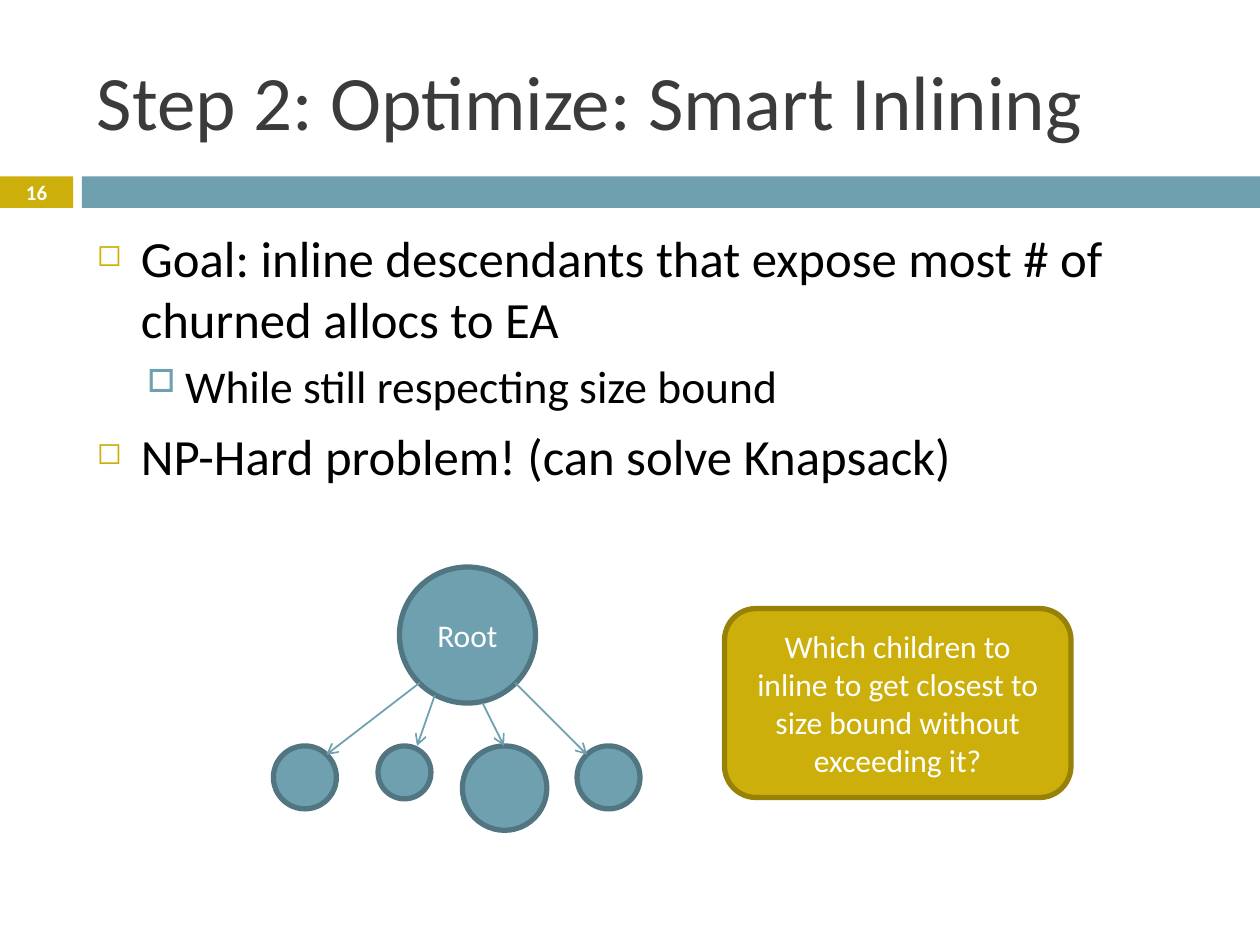
"""Build the smart inlining slide."""
from typing import NamedTuple

from lxml.etree import SubElement
from pptx import Presentation
from pptx.dml.color import RGBColor
from pptx.enum.shapes import MSO_CONNECTOR, MSO_SHAPE
from pptx.enum.text import MSO_ANCHOR, PP_ALIGN
from pptx.oxml.ns import qn
from pptx.util import Inches, Pt

COLORS = {
    "gold": "CCAF0A", "gold_edge": "978107", "teal": "6EA0B0",
    "teal_edge": "517682", "title": "3B3B3B", "black": "000000", "white": "FFFFFF",
}
CENTERED = {"alignment": PP_ALIGN.CENTER}


class Box(NamedTuple):
    left: float
    top: float
    width: float
    height: float


class Bullet(NamedTuple):
    text: str
    level: int
    size: float
    space: float
    margin: float
    hanging: float
    mark: str
    mark_color: str
    mark_percent: int


class Node(NamedTuple):
    left: float
    top: float
    diameter: float
    label: str = ""


class Arrow(NamedTuple):
    start: tuple[float, float]
    end: tuple[float, float]


BULLET_STYLES = [
    {"level": 0, "size": 29, "space": 7, "margin": 0.35, "hanging": 0.35,
     "mark": "◻", "mark_color": "gold", "mark_percent": 60},
    {"level": 1, "size": 26, "space": 5.5, "margin": 0.7, "hanging": 0.3,
     "mark": "□", "mark_color": "teal", "mark_percent": 70},
]
BULLETS = [
    Bullet("Goal: inline descendants that expose most # of churned allocs to EA", **BULLET_STYLES[0]),
    Bullet("While still respecting size bound", **BULLET_STYLES[1]),
    Bullet("NP-Hard problem! (can solve Knapsack)", **BULLET_STYLES[0]),
]
CHILD_TOP = 5.92
NODES = [Node(3.17, 4.5, 1.08, "Root")] + [
    Node(left, CHILD_TOP, diameter)
    for left, diameter in [(2.17, 0.5), (3, 0.42), (3.67, 0.67), (4.58, 0.5)]
]
ARROWS = [
    Arrow((3.33, 5.42), (2.59, 5.99)),
    Arrow((3.83, 5.58), (4, CHILD_TOP)),
    Arrow((4.09, 5.42), (4.66, 5.99)),
    Arrow((3.45, 5.52), (3.31, CHILD_TOP)),
]


def color(name: str) -> RGBColor:
    """Return a named colour."""
    return RGBColor.from_string(COLORS[name])


def apply(target, values: dict) -> None:
    """Set each attribute from a dict of format values."""
    for name, value in values.items():
        setattr(target, name, value)


def write(paragraph, text: str, size: float, color_name: str, bold: bool = False) -> None:
    """Add one formatted run to a paragraph."""
    run = paragraph.add_run()
    run.text = text
    apply(run.font, {"name": "Calibri", "size": Pt(size), "bold": bold})
    run.font.color.rgb = color(color_name)


def add_shape(slide, kind, box: Box, fill: str, edge: str = "", text: str = ""):
    """Add a filled shape with an optional edge and centred text."""
    shape = slide.shapes.add_shape(kind, *map(Inches, box))
    shape.shadow.inherit = False
    shape.fill.solid()
    shape.fill.fore_color.rgb = color(fill)
    if edge:
        shape.line.color.rgb = color(edge)
        shape.line.width = Pt(3)
    else:
        shape.line.fill.background()
    if text:
        apply(shape.text_frame, {"word_wrap": True, "vertical_anchor": MSO_ANCHOR.MIDDLE})
        paragraph = shape.text_frame.paragraphs[0]
        apply(paragraph, CENTERED)
        write(paragraph, text, 18, "white")
    return shape


def add_text_box(slide, box: Box, anchor=MSO_ANCHOR.MIDDLE):
    """Add a wrapping text box and return its text frame."""
    frame = slide.shapes.add_textbox(*map(Inches, box)).text_frame
    apply(frame, {"word_wrap": True, "vertical_anchor": anchor})
    return frame


def add_bullet(paragraph, bullet: Bullet) -> None:
    """Fill a paragraph with a bulleted line."""
    apply(paragraph, {"level": bullet.level, "space_before": Pt(bullet.space)})
    properties = paragraph._p.get_or_add_pPr()
    properties.set("marL", str(Inches(bullet.margin)))
    properties.set("indent", str(-Inches(bullet.hanging)))
    mark_color = SubElement(properties, qn("a:buClr"))
    SubElement(mark_color, qn("a:srgbClr"), val=COLORS[bullet.mark_color])
    SubElement(properties, qn("a:buSzPct"), val=str(bullet.mark_percent * 1000))
    SubElement(properties, qn("a:buChar"), char=bullet.mark)
    write(paragraph, bullet.text, bullet.size, "black")


def add_arrow(slide, arrow: Arrow) -> None:
    """Add a thin line with an open arrowhead."""
    connector = slide.shapes.add_connector(
        MSO_CONNECTOR.STRAIGHT, *map(Inches, arrow.start + arrow.end))
    connector.line.color.rgb = color("teal")
    connector.line.width = Pt(1)
    SubElement(connector.line._get_or_add_ln(), qn("a:tailEnd"), type="arrow")
    SubElement(connector._element.spPr, qn("a:effectLst"))


def main() -> None:
    """Build and save the slide."""
    presentation = Presentation()
    apply(presentation, {"slide_width": Inches(10), "slide_height": Inches(7.5)})
    slide = presentation.slides.add_slide(presentation.slide_layouts[6])

    add_shape(slide, MSO_SHAPE.RECTANGLE, Box(0, 1.4, 0.58, 0.25), "gold")
    add_shape(slide, MSO_SHAPE.RECTANGLE, Box(0.65, 1.4, 9.35, 0.25), "teal")

    title = add_text_box(slide, Box(0.67, 0.25, 8.92, 1.08))
    write(title.paragraphs[0], "Step 2: Optimize: Smart Inlining", 44, "title")

    number = add_text_box(slide, Box(0, 1.39, 0.58, 0.27))
    apply(number.paragraphs[0], CENTERED)
    write(number.paragraphs[0], "16", 11.9, "white", bold=True)

    body = add_text_box(slide, Box(0.67, 1.75, 8.92, 4.92), MSO_ANCHOR.TOP)
    for index, bullet in enumerate(BULLETS):
        add_bullet(body.add_paragraph() if index else body.paragraphs[0], bullet)

    for node in NODES:
        box = Box(node.left, node.top, node.diameter, node.diameter)
        add_shape(slide, MSO_SHAPE.OVAL, box, "teal", "teal_edge", node.label)
    for arrow in ARROWS:
        add_arrow(slide, arrow)

    add_shape(slide, MSO_SHAPE.FLOWCHART_ALTERNATE_PROCESS, Box(5.75, 4.83, 2.75, 1.5),
              "gold", "gold_edge",
              "Which children to inline to get closest to size bound without exceeding it?")
    presentation.save("out.pptx")


if __name__ == "__main__":
    main()
